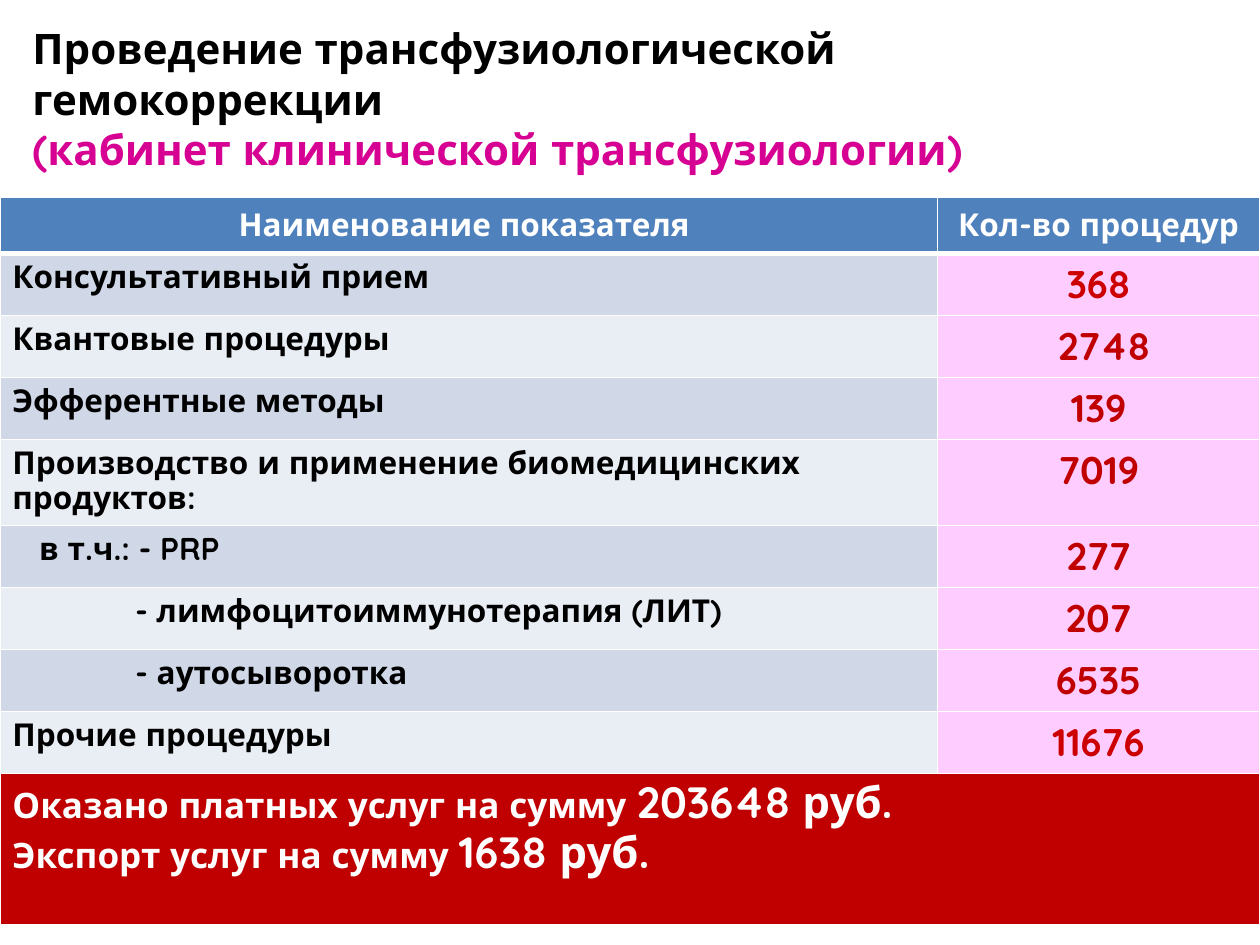
from lxml import etree
from pptx import Presentation
from pptx.dml.color import RGBColor
from pptx.enum.text import MSO_ANCHOR, MSO_AUTO_SIZE, PP_ALIGN
from pptx.oxml.ns import qn
from pptx.util import Cm, Pt

LEFT, CENTER = PP_ALIGN.LEFT, PP_ALIGN.CENTER
TOP, MIDDLE = MSO_ANCHOR.TOP, MSO_ANCHOR.MIDDLE
NO_AUTOFIT = MSO_AUTO_SIZE.NONE

BLACK = RGBColor(0x00, 0x00, 0x00)
WHITE = RGBColor(0xFF, 0xFF, 0xFF)
MAGENTA = RGBColor(0xD6, 0x00, 0x93)
BLUE = RGBColor(0x4F, 0x81, 0xBD)
BAND_DARK = RGBColor(0xD0, 0xD8, 0xE8)
BAND_LIGHT = RGBColor(0xE9, 0xED, 0xF4)
PINK = RGBColor(0xFF, 0xCC, 0xFF)
RED = RGBColor(0xCC, 0x00, 0x00)
DARK_RED = RGBColor(0xC0, 0x00, 0x00)

FONT = "Quicksand"
CELL_MARGIN = 0.25
ROW_HEIGHT = 1.25

# Indicator, indent in cm, row height in cm, count, colour of the count
INDICATORS = [
    ("Консультативный прием", 0, ROW_HEIGHT, "368", RED),
    ("Квантовые процедуры", 0, ROW_HEIGHT, " 2748", DARK_RED),
    ("Эфферентные методы", 0, ROW_HEIGHT, "139", DARK_RED),
    ("Производство и применение биомедицинских продуктов:", 0, 1.73, "7019", DARK_RED),
    ("в т.ч.: - PRP", 0.54, ROW_HEIGHT, "277", DARK_RED),
    ("- лимфоцитоиммунотерапия (ЛИТ)", 2.48, ROW_HEIGHT, "207", DARK_RED),
    ("- аутосыворотка", 2.48, ROW_HEIGHT, "6535", DARK_RED),
    ("Прочие процедуры", 0, ROW_HEIGHT, "11676", RED),
]
TOTALS = [
    ("Оказано платных услуг на сумму ", "203648 руб."),
    ("Экспорт услуг на сумму ", "1638 руб."),
]


def add_text(paragraph, text, *, size=18, color=BLACK, align=LEFT, spacing=None):
    paragraph.alignment = align
    if spacing:
        paragraph.line_spacing = spacing
    run = paragraph.add_run()
    run.text = text
    run.font.name = FONT
    run.font.size = Pt(size)
    run.font.bold = True
    run.font.color.rgb = color


class SlideBuilder:
    """Holds the current slide and draws its elements in one style."""

    def __init__(self, slide):
        self.slide = slide

    def title(self, first, second, left, top, width, height):
        heading = self.slide.shapes.title
        heading.left, heading.top = Cm(left), Cm(top)
        heading.width, heading.height = Cm(width), Cm(height)
        frame = heading.text_frame
        frame.word_wrap = True
        frame.auto_size = NO_AUTOFIT
        frame.vertical_anchor = MIDDLE
        paragraph = frame.paragraphs[0]
        add_text(paragraph, first, size=24)
        paragraph.add_line_break()
        add_text(paragraph, second, size=24, color=MAGENTA)

    def table(self, left, top, widths, heights):
        frame = self.slide.shapes.add_table(
            len(heights), len(widths), Cm(left), Cm(top), Cm(sum(widths)), Cm(sum(heights)))
        for column, width in zip(frame.table.columns, widths):
            column.width = Cm(width)
        for row, height in zip(frame.table.rows, heights):
            row.height = Cm(height)
        return frame.table

    def cell(self, cell, fill, *, anchor=TOP, indent=0, bottom_line=1):
        cell.vertical_anchor = anchor
        cell.margin_left = Cm(CELL_MARGIN + indent)
        self.borders(cell, bottom_line)
        cell.fill.solid()
        cell.fill.fore_color.rgb = fill
        return cell.text_frame

    def borders(self, cell, bottom_line):
        properties = cell._tc.get_or_add_tcPr()
        for side, points in (("L", 1), ("R", 1), ("T", 1), ("B", bottom_line)):
            line = etree.SubElement(properties, qn(f"a:ln{side}"), w=str(Pt(points)))
            solid = etree.SubElement(line, qn("a:solidFill"))
            etree.SubElement(solid, qn("a:srgbClr"), val=str(WHITE))


def main():
    presentation = Presentation()
    presentation.slide_width, presentation.slide_height = Cm(25.4), Cm(19.05)
    title_only = presentation.slide_layouts[5]
    builder = SlideBuilder(presentation.slides.add_slide(title_only))

    # Heading
    builder.title("Проведение трансфузиологической гемокоррекции ",
                  "(кабинет клинической трансфузиологии)", 0.4, 0.78, 21.44, 2.4)

    # Table grid
    heights = [1.14, *(height for _, _, height, _, _ in INDICATORS), 3.05]
    procedures = builder.table(0, 3.97, [18.9, 6.5], heights)

    # Header row
    for column, caption in enumerate(("Наименование показателя ", "Кол-во процедур")):
        header = builder.cell(procedures.cell(0, column), BLUE, anchor=MIDDLE, bottom_line=3)
        add_text(header.paragraphs[0], caption, color=WHITE, align=CENTER)

    # Indicator rows
    for row, (indicator, indent, _, count, count_color) in enumerate(INDICATORS, start=1):
        band = BAND_DARK if row % 2 else BAND_LIGHT
        name = builder.cell(procedures.cell(row, 0), band, indent=indent)
        add_text(name.paragraphs[0], indicator, spacing=0.9)
        value = builder.cell(procedures.cell(row, 1), PINK)
        add_text(value.paragraphs[0], count, size=22, color=count_color, align=CENTER)

    # Totals across both columns
    last = len(heights) - 1
    procedures.cell(last, 0).merge(procedures.cell(last, 1))
    totals = builder.cell(procedures.cell(last, 0), DARK_RED)
    totals.add_paragraph()
    for paragraph, (label, amount) in zip(totals.paragraphs, TOTALS):
        add_text(paragraph, label, size=20, color=WHITE, spacing=0.9)
        add_text(paragraph, amount, size=25, color=WHITE, spacing=0.9)

    presentation.save("out.pptx")


if __name__ == "__main__":
    main()
